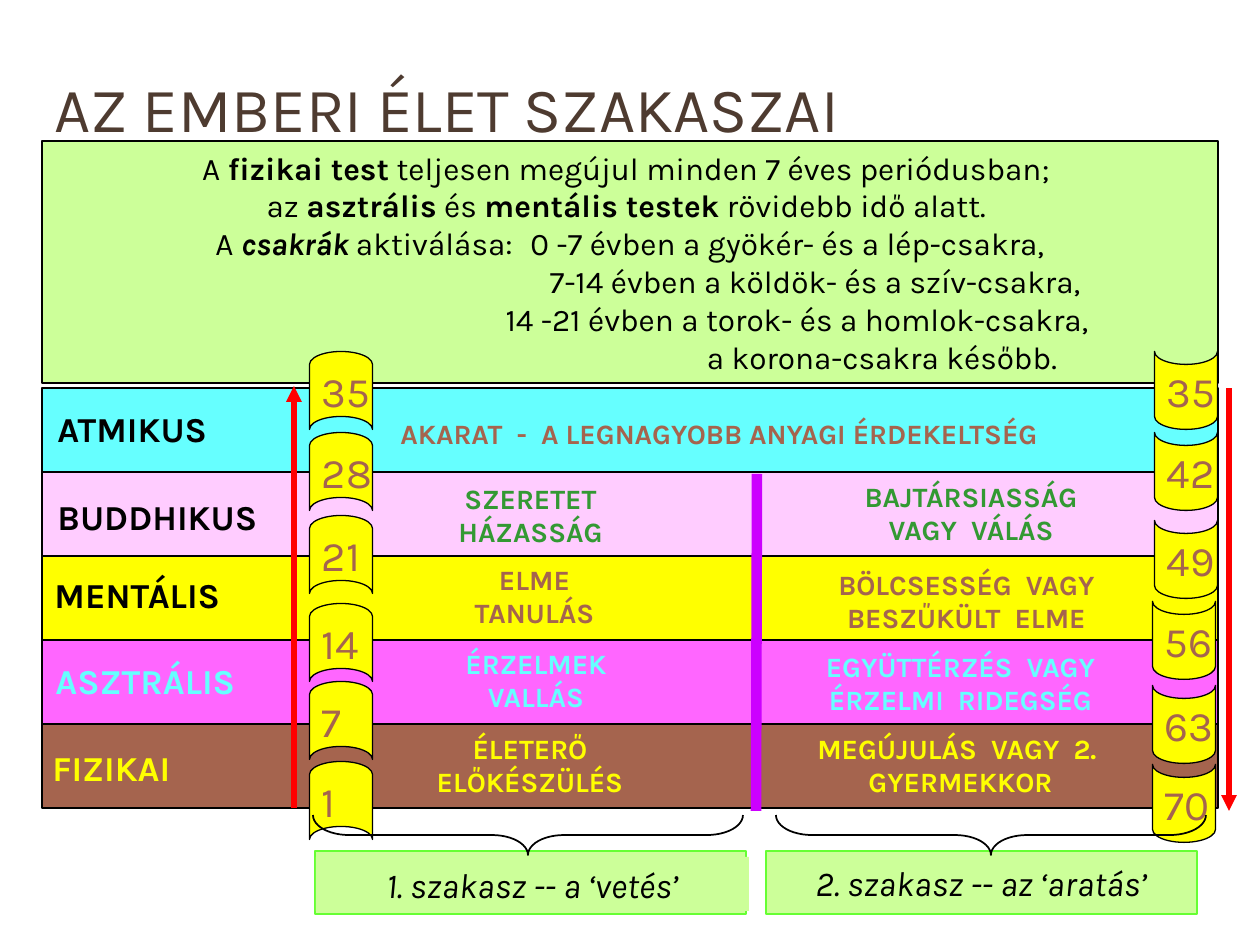
from dataclasses import dataclass

from lxml.etree import SubElement
from pptx import Presentation
from pptx.dml.color import RGBColor
from pptx.enum.shapes import MSO_CONNECTOR as Connector, MSO_SHAPE as Shape
from pptx.enum.text import MSO_ANCHOR as Anchor, MSO_AUTO_SIZE as AutoSize, PP_ALIGN as Align
from pptx.oxml.ns import qn
from pptx.util import Pt

EMU_PER_PX = 914400 / 126


@dataclass(frozen=True)
class Theme:
    font: str = "Karla"
    title: str = "4E3B30"
    black: str = "000000"
    yellow: str = "FFFF00"
    pink: str = "FFCCFF"
    magenta: str = "FF66FF"
    cyan: str = "66FFFF"
    brown: str = "A5644E"
    green: str = "339933"
    panel: str = "CCFF99"
    panel_edge: str = "66FF33"
    arrow: str = "FF0000"
    divider: str = "CC00FF"
    title_size: int = 36
    age_size: int = 24
    label_size: int = 20
    intro_size: int = 18
    body_size: int = 16


THEME = Theme()

LEVEL_LEFT, LEVEL_TOP, LEVEL_WIDTH, LEVEL_HEIGHT = 42, 388, 1176, 84

# Name, band colour, name colour, name box
LEVELS = [
    ("ATMIKUS", THEME.cyan, THEME.black, (45, 401, 186, 54)),
    ("BUDDHIKUS", THEME.pink, THEME.black, (45, 489, 238, 54)),
    ("MENTÁLIS", THEME.yellow, THEME.black, (42, 567, 232, 54)),
    ("ASZTRÁLIS", THEME.magenta, THEME.cyan, (43, 653, 231, 54)),
    ("FIZIKAI", THEME.brown, THEME.yellow, (40, 740, 170, 54)),
]

# Text, colour, box
THEMES_OF_LIFE = [
    ("SZERETET HÁZASSÁG", THEME.green, (431, 475, 199, 81)),
    ("ELME TANULÁS", THEME.brown, (445, 556, 179, 81)),
    ("ÉRZELMEK VALLÁS", THEME.cyan, (431, 640, 210, 81)),
    ("ÉLETERŐ ELŐKÉSZÜLÉS", THEME.yellow, (399, 725, 262, 81)),
    ("BAJTÁRSIASSÁG VAGY  VÁLÁS", THEME.green, (829, 473, 284, 81)),
    ("BÖLCSESSÉG  VAGY BESZŰKÜLT  ELME", THEME.brown, (809, 561, 315, 81)),
    ("EGYÜTTÉRZÉS  VAGY ÉRZELMI  RIDEGSÉG", THEME.cyan, (788, 643, 345, 81)),
    ("MEGÚJULÁS  VAGY  2.  GYERMEKKOR", THEME.yellow, (798, 725, 325, 81)),
]

# Age, left, top
RISING_AGES = [("28", 302, 440), ("21", 302, 523), ("14", 302, 611),
               ("7", 302, 689), ("1", 302, 769), ("35", 302, 359)]
FALLING_AGES = [("35", 1147, 359), ("42", 1147, 440), ("49", 1147, 528),
                ("56", 1145, 609), ("63", 1145, 693), ("70", 1145, 772)]

BOLD, BOLD_ITALIC = {"bold": True}, {"bold": True, "italic": True}
# Left indent, runs
INTRO = [
    (0, [("A ", {}), ("fizikai test", BOLD),
         (" teljesen megújul minden 7 éves periódusban; ", {})]),
    (0, [("az ", {}), ("asztrális", BOLD), (" és ", {}), ("mentális testek", BOLD),
         (" rövidebb idő alatt. ", {})]),
    (0, [("A ", {}), ("csakrák", BOLD_ITALIC),
         (" aktiválása:\t0 -7 évben a gyökér- és a lép-csakra,", {})]),
    (378, [("7-14 évben a köldök- és a szív-csakra, ", {})]),
    (342, [("14 -21 évben a torok- és a homlok-csakra, ", {})]),
    (504, [("a korona-csakra később.", {})]),
]


def px(*lengths):
    return [round(length * EMU_PER_PX) for length in lengths]


def rgb(color):
    return RGBColor.from_string(color)


def add_run(paragraph, text, size, color, **formats):
    run = paragraph.add_run()
    run.text = text
    run.font.color.rgb = rgb(color)
    for name, value in {"name": THEME.font, "size": Pt(size), **formats}.items():
        setattr(run.font, name, value)


def write(shape, text, size, color, align=Align.CENTER, frame_formats=None, **formats):
    """Put one paragraph into a shape."""
    for name, value in {"word_wrap": True, **(frame_formats or {})}.items():
        setattr(shape.text_frame, name, value)
    paragraph = shape.text_frame.paragraphs[0]
    paragraph.alignment = align
    add_run(paragraph, text, size, color, **formats)


def add_shape(slide, kind, box, fill=None, line=None, width=0.75):
    shape = slide.shapes.add_shape(kind, *px(*box))
    shape.shadow.inherit = False
    if fill:
        shape.fill.solid()
        shape.fill.fore_color.rgb = rgb(fill)
    else:
        shape.fill.background()
    if line:
        shape.line.color.rgb = rgb(line)
        shape.line.width = Pt(width)
    else:
        shape.line.fill.background()
    return shape


def add_label(slide, box, text, size, color, align=Align.CENTER):
    label = slide.shapes.add_textbox(*px(*box))
    write(label, text, size, color, align, {"auto_size": AutoSize.SHAPE_TO_FIT_TEXT}, bold=True)


def add_line(slide, ends, color, width, arrow=False):
    """Draw a line; an arrowhead sits at its start."""
    line = slide.shapes.add_connector(Connector.STRAIGHT, *px(*ends))
    line.line.color.rgb = rgb(color)
    line.line.width = Pt(width)
    if arrow:
        SubElement(line.line._get_or_add_ln(), qn("a:headEnd"), type="triangle")
    SubElement(line._element.spPr, qn("a:effectLst"))


def add_age(slide, age, left, top, rotation):
    """Draw a curved age tile whose number stays upright."""
    tile = add_shape(slide, Shape.FLOWCHART_STORED_DATA, (left, top, 78, 63),
                     THEME.yellow, THEME.black)
    tile.rotation = rotation
    if rotation == 270:
        tile._element.spPr.find(qn("a:xfrm")).set("flipV", "1")
    write(tile, age, THEME.age_size, THEME.brown,
          frame_formats={"word_wrap": False, "vertical_anchor": Anchor.MIDDLE})
    body = tile.text_frame._txBody.find(qn("a:bodyPr"))
    body.set("vert", "eaVert")
    body.set("rot", "10800000")


def add_brace(slide, left):
    brace = add_shape(slide, Shape.LEFT_BRACE, (left, 620, 40, 430), line=THEME.black, width=1)
    brace.rotation = 270
    brace.adjustments[0] = 0.9


def add_title(slide, text):
    title = slide.shapes.title
    title.left, title.top, title.width, title.height = px(42, 63, 1197, 116)
    write(title, text, THEME.title_size, THEME.title, Align.LEFT,
          {"vertical_anchor": Anchor.TOP, "auto_size": AutoSize.NONE})


def add_intro(slide):
    panel = add_shape(slide, Shape.RECTANGLE, (42, 141, 1176, 242), THEME.panel, THEME.black)
    frame = panel.text_frame
    frame.word_wrap = True
    frame.vertical_anchor = Anchor.MIDDLE
    for index, (indent, runs) in enumerate(INTRO):
        paragraph = frame.add_paragraph() if index else frame.paragraphs[0]
        paragraph.alignment = Align.CENTER
        if indent:
            paragraph._p.get_or_add_pPr().set("marL", str(px(indent)[0]))
        for text, formats in runs:
            add_run(paragraph, text, THEME.intro_size, THEME.black, **formats)


def add_levels(slide):
    for row, (name, fill, color, box) in enumerate(LEVELS):
        band = (LEVEL_LEFT, LEVEL_TOP + row * LEVEL_HEIGHT, LEVEL_WIDTH, LEVEL_HEIGHT)
        add_shape(slide, Shape.RECTANGLE, band, fill, THEME.black)
        add_label(slide, box, name, THEME.label_size, color, Align.LEFT)


def add_stage_captions(slide):
    first, second = [add_shape(slide, Shape.RECTANGLE, (left, 851, 431, 63),
                               THEME.panel, THEME.panel_edge) for left in (315, 766)]
    first = add_shape(slide, Shape.RECTANGLE, (316, 857, 433, 54), THEME.panel)
    for caption, text in ((first, "1. szakasz -- a ‘vetés’"), (second, "2. szakasz -- az ‘aratás’")):
        write(caption, text, THEME.label_size, THEME.black,
              frame_formats={"vertical_anchor": Anchor.MIDDLE}, italic=True)


def main():
    presentation = Presentation()
    presentation.slide_width, presentation.slide_height = px(1260, 945)
    slide = presentation.slides.add_slide(presentation.slide_layouts[5])
    add_title(slide, "AZ EMBERI ÉLET SZAKASZAI")
    add_stage_captions(slide)
    add_levels(slide)
    add_intro(slide)
    add_line(slide, (294, 386, 294, 808), THEME.arrow, 3, arrow=True)
    add_line(slide, (757, 474, 756, 811), THEME.divider, 6)
    add_label(slide, (388, 410, 756, 47), "AKARAT  -  A LEGNAGYOBB ANYAGI ÉRDEKELTSÉG",
              THEME.body_size, THEME.brown, Align.LEFT)
    for text, color, box in THEMES_OF_LIFE:
        add_label(slide, box, text, THEME.body_size, color)
    for ages, rotation in ((RISING_AGES, 90), (FALLING_AGES, 270)):
        for age, left, top in ages:
            add_age(slide, age, left, top, rotation)
    for left in (508, 971):
        add_brace(slide, left)
    add_line(slide, (1229, 811, 1229, 388), THEME.arrow, 3, arrow=True)
    presentation.save("out.pptx")


if __name__ == "__main__":
    main()
